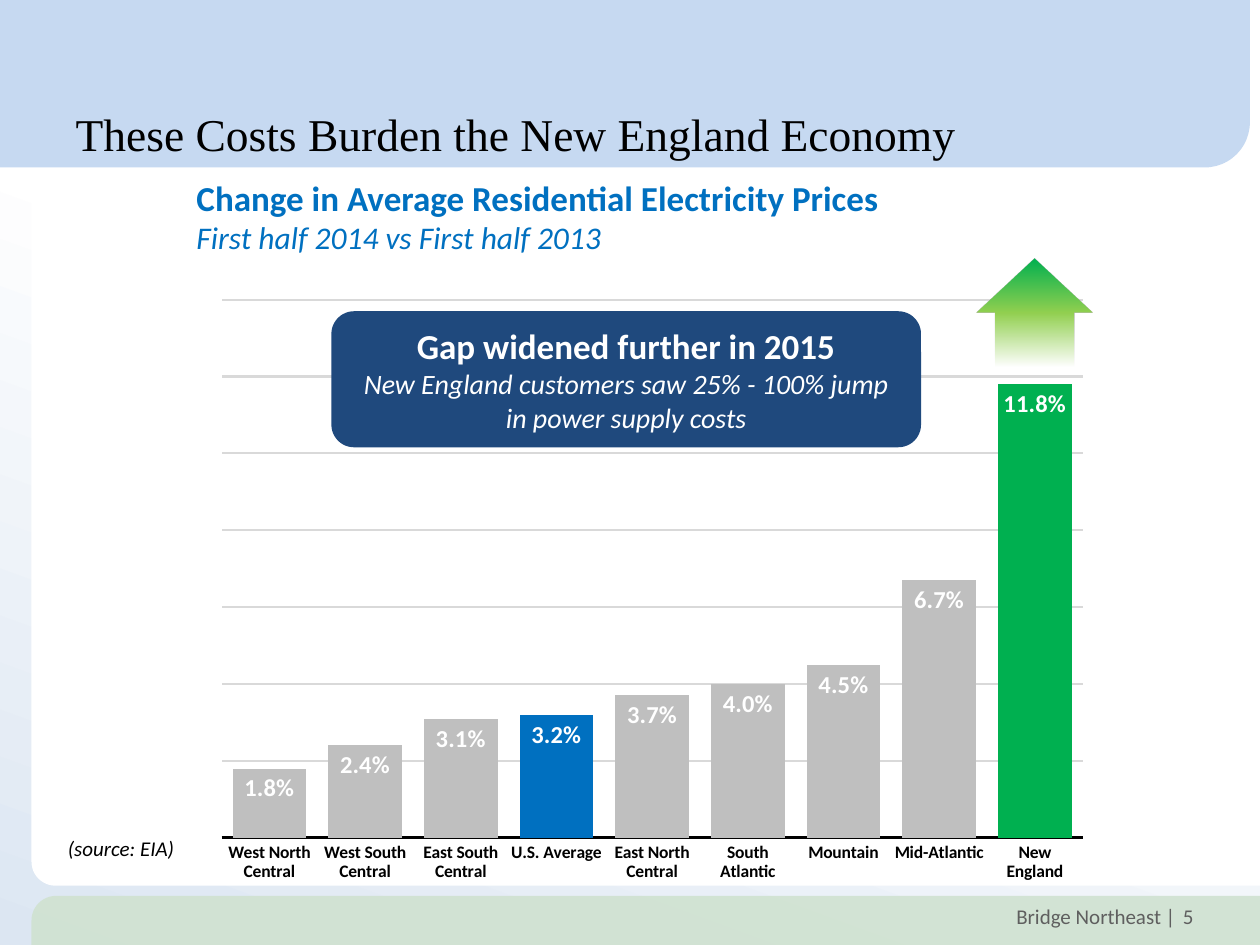
import pptx
import pptx.util
import pptx.oxml
import pptx.chart.data
from pptx.dml.color import RGBColor
from pptx.enum.chart import XL_CHART_TYPE, XL_LABEL_POSITION, XL_TICK_LABEL_POSITION, XL_TICK_MARK
from pptx.enum.shapes import MSO_SHAPE
from pptx.enum.text import MSO_ANCHOR, PP_ALIGN
from pptx.oxml.ns import nsdecls, qn
from pptx.util import Inches

COLORS = {
    "white": "FFFFFF", "black": "000000", "pale": "DCE6F2", "band": "C6D9F1",
    "footer": "D0E2D1", "grey_text": "5F5F5F", "grid": "D9D9D9", "bar": "BFBFBF",
    "blue": "0070C0", "green": "00B050", "lime": "92D050", "navy": "1F497D",
}
TITLE = "These Costs Burden the New England Economy"
HEADING = [
    ("Change in Average Residential Electricity Prices", 20, "blue", True, False),
    ("First half 2014 vs First half 2013", 18, "blue", False, True),
]
CALLOUT = [
    ("Gap widened further in 2015", 20, "white", True, False),
    ("New England customers saw 25% - 100% jump in power supply costs", 16, "white", False, True),
]
SOURCE = [("(source: EIA)", 12, "black", False, True)]
FOOTER = [("Bridge Northeast |", 12, "grey_text", False, False)]
NUMBER = [("5", 12, "grey_text", False, False)]
PRICES = [
    ("West North Central", 0.018), ("West South Central", 0.024),
    ("East South Central", 0.031), ("U.S. Average", 0.032),
    ("East North Central", 0.037), ("South Atlantic", 0.04),
    ("Mountain", 0.045), ("Mid-Atlantic", 0.067), ("New England", 0.118),
]
HIGHLIGHTS = {"U.S. Average": "blue", "New England": "green"}
PLOT = {"x": 0.046, "y": 0.127, "w": 0.93, "h": 0.81}


def rgb(name):
    return RGBColor.from_string(COLORS[name])


def style(font, size, color, bold=False, italic=False, name="Calibri"):
    font.name, font.size = name, pptx.util.Pt(size)
    font.bold, font.italic = bold, italic
    font.color.rgb = rgb(color)


def write(sp, lines, align=PP_ALIGN.LEFT, anchor=MSO_ANCHOR.TOP, wrap=True):
    tf = sp.text_frame
    tf.word_wrap, tf.vertical_anchor = wrap, anchor
    for i, (text, *look) in enumerate(lines):
        p = tf.add_paragraph() if i else tf.paragraphs[0]
        p.text, p.alignment = text, align
        style(p.font, *look)
    return tf


def add_text(s, box, lines, **layout):
    return write(s.shapes.add_textbox(*map(Inches, box)), lines, **layout)


def add_panel(s, kind, box, color=None, adjust=(), flip=""):
    sp = s.shapes.add_shape(kind, *map(Inches, box))
    sp.shadow.inherit = False
    sp.line.fill.background()
    if color:
        sp.fill.solid()
        sp.fill.fore_color.rgb = rgb(color)
    for i, value in enumerate(adjust):
        sp.adjustments[i] = value
    for axis in flip:
        sp._element.spPr.find(qn("a:xfrm")).set("flip" + axis, "1")
    return sp


def set_gradient(sp, stops, angle):
    marks = "".join(
        f'<a:gs pos="{pos * 1000}"><a:srgbClr val="{COLORS[color]}">'
        f'<a:alpha val="{alpha * 1000}"/></a:srgbClr></a:gs>'
        for pos, color, alpha in stops)
    sp._element.spPr.find(qn("a:prstGeom")).addnext(pptx.oxml.parse_xml(
        f'<a:gradFill {nsdecls("a")} rotWithShape="1"><a:gsLst>{marks}</a:gsLst>'
        f'<a:lin ang="{angle * 60000}" scaled="0"/></a:gradFill>'))


def add_background(s):
    base = add_panel(s, MSO_SHAPE.RECTANGLE, (0, 0, 10, 7.5))
    set_gradient(base, [(43, "white", 100), (100, "pale", 100)], 110)
    corner = MSO_SHAPE.ROUND_1_RECTANGLE
    add_panel(s, corner, (0.25, 0, 9.75, 7.03), "white", [0.027], "HV")
    strip = add_panel(s, corner, (0.25, 7.11, 9.75, 0.39), "footer", [0.5], "H")
    clr = strip._element.spPr.find(qn("a:solidFill"))[0]
    clr.append(pptx.oxml.parse_xml(f'<a:alpha {nsdecls("a")} val="92000"/>'))
    add_panel(s, corner, (0, 0, 9.92, 1.33), "band", [0.27], "V")


def add_title(s):
    title = s.shapes.title
    title.left, title.top, title.width, title.height = map(Inches, (0.5, 0.18, 7.56, 1.15))
    tf = write(title, [(TITLE, 26, "black", False, False, "Times New Roman")],
               anchor=MSO_ANCHOR.BOTTOM)
    tf.paragraphs[0].line_spacing = 0.85
    s.shapes._spTree.append(title._element)


def add_price_chart(s):
    data = pptx.chart.data.CategoryChartData(number_format="0.0%")
    data.categories = [region for region, change in PRICES]
    data.add_series("Series 1", [change for region, change in PRICES])
    chart = s.shapes.add_chart(XL_CHART_TYPE.COLUMN_CLUSTERED,
                               *map(Inches, (1.42, 1.71, 7.35, 5.29)), data).chart
    chart.has_legend = chart.has_title = False
    style(chart.font, 10, "black", True)

    cat, val = chart.category_axis, chart.value_axis
    cat.major_tick_mark = val.major_tick_mark = XL_TICK_MARK.NONE
    cat.format.line.color.rgb = rgb("black")
    cat.format.line.width = pptx.util.Pt(1.72)
    style(cat.tick_labels.font, 10, "black", True)
    val.minimum_scale, val.maximum_scale, val.major_unit = 0, 0.14, 0.02
    val.tick_label_position = XL_TICK_LABEL_POSITION.NONE
    val.format.line.fill.background()
    val.major_gridlines.format.line.color.rgb = rgb("grid")
    val.major_gridlines.format.line.width = pptx.util.Pt(1.15)

    plot = chart.plots[0]
    plot.gap_width, plot.vary_by_categories = 30, False
    series = plot.series[0]
    series.format.fill.solid()
    series.format.fill.fore_color.rgb = rgb("bar")
    for i, (region, change) in enumerate(PRICES):
        if region in HIGHLIGHTS:
            fill = series.points[i].format.fill
            fill.solid()
            fill.fore_color.rgb = rgb(HIGHLIGHTS[region])
    labels = series.data_labels
    labels.show_value = True
    labels.position = XL_LABEL_POSITION.INSIDE_END
    labels.number_format, labels.number_format_is_linked = "0.0%", False
    style(labels.font, 14, "white", True)

    area = chart._chartSpace.chart.plotArea
    for old in area.findall(qn("c:layout")):
        area.remove(old)
    sizes = "".join(f'<c:{key} val="{value}"/>' for key, value in PLOT.items())
    area.insert(0, pptx.oxml.parse_xml(
        f'<c:layout {nsdecls("c")}><c:manualLayout><c:layoutTarget val="inner"/>'
        f'<c:xMode val="edge"/><c:yMode val="edge"/>{sizes}</c:manualLayout></c:layout>'))


def main():
    prs = pptx.Presentation()
    prs.slide_width, prs.slide_height = Inches(10), Inches(7.5)
    s = prs.slides.add_slide(prs.slide_layouts[5])
    add_background(s)
    add_text(s, (7.93, 7.12, 1.5, 0.3), FOOTER, align=PP_ALIGN.RIGHT, wrap=False)
    add_title(s)
    add_text(s, (9.29, 7.07, 0.44, 0.4), NUMBER, anchor=MSO_ANCHOR.MIDDLE)
    add_price_chart(s)
    tf = add_text(s, (1.56, 1.4, 5.84, 0.83), HEADING)
    tf.margin_left = tf.margin_top = tf.margin_right = tf.margin_bottom = 0
    callout = add_panel(s, MSO_SHAPE.ROUNDED_RECTANGLE, (2.63, 2.47, 4.68, 1.08), "navy")
    write(callout, CALLOUT, PP_ALIGN.CENTER, MSO_ANCHOR.MIDDLE)
    add_text(s, (0.44, 6.58, 1.05, 0.3), SOURCE, wrap=False)
    arrow = add_panel(s, MSO_SHAPE.UP_ARROW, (7.75, 2.05, 0.92, 0.86), adjust=[0.68, 0.5])
    set_gradient(arrow, [(0, "green", 100), (50, "lime", 100), (100, "lime", 0)], 90)
    prs.save("out.pptx")


if __name__ == "__main__":
    main()
